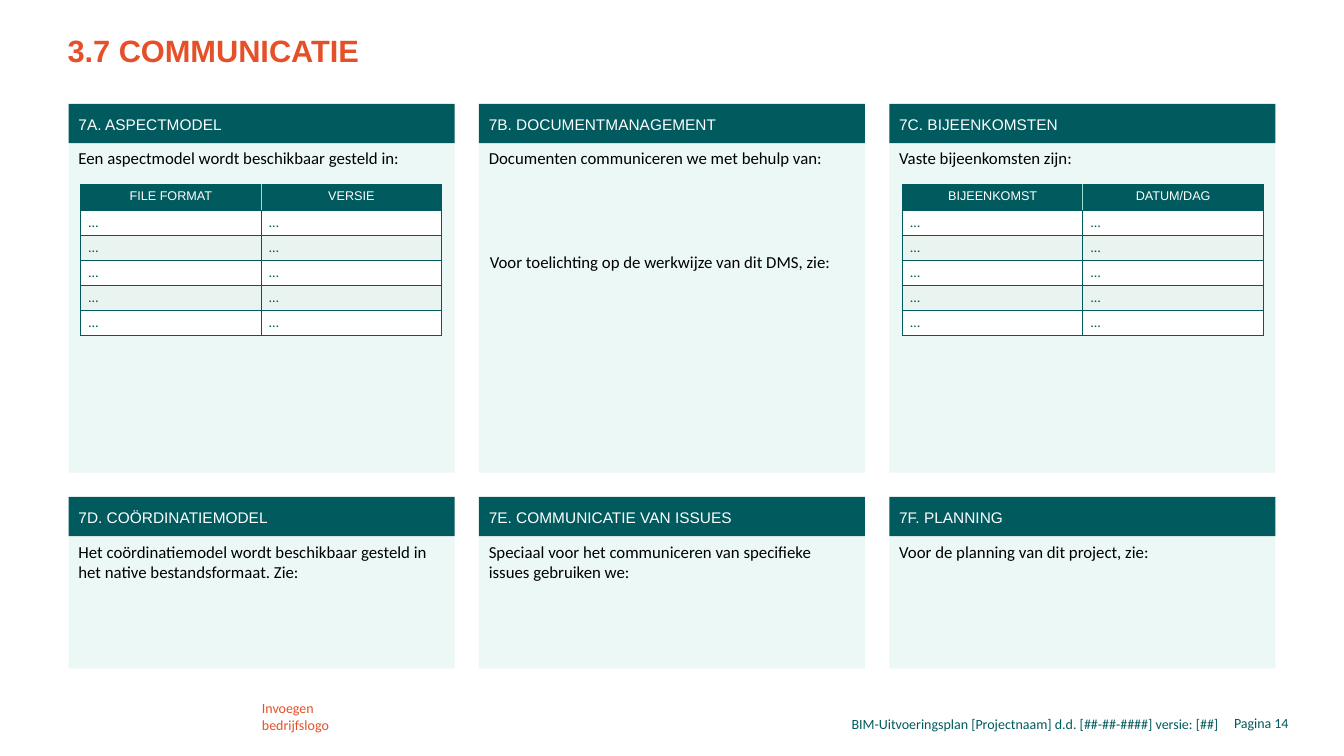
from dataclasses import dataclass

from lxml import etree
from pptx import Presentation
from pptx import util as u
from pptx.dml.color import RGBColor
from pptx.enum import shapes, text
from pptx.oxml import ns

LEFT, CENTER, RIGHT = (text.PP_ALIGN.LEFT, text.PP_ALIGN.CENTER,
                       text.PP_ALIGN.RIGHT)
TOP, MIDDLE = text.MSO_ANCHOR.TOP, text.MSO_ANCHOR.MIDDLE


@dataclass(frozen=True)
class Theme:
    teal: str = "005A5E"
    orange: str = "E55028"
    mint: str = "EBF8F6"
    band: str = "E9F3F0"
    rule: str = "9DDED3"
    white: str = "FFFFFF"
    black: str = "000000"
    head: str = "Arial"
    body: str = "Calibri"
    title: int = 22
    text: int = 12
    bar: int = 11
    small: int = 10
    label: int = 9


class Deck:
    def __init__(self, theme):
        self.theme = theme
        self.prs = Presentation()
        self.prs.slide_width = u.Inches(13.33)
        self.prs.slide_height = u.Inches(7.5)
        self.slide = self.prs.slides.add_slide(self.prs.slide_layouts[5])

    def label(self, frame, words, size, color, font=None, align=LEFT,
              bold=False, space=None):
        """Put formatted words into a text frame."""
        frame.text = words
        for par in frame.paragraphs:
            par.alignment = align
            par.line_spacing = space
            for run in par.runs:
                run.font.size = u.Pt(size)
                run.font.name = font or self.theme.body
                run.font.bold = bold
                run.font.color.rgb = RGBColor.from_string(color)

    def inset(self, item, left=0.1, top=0.05, right=0.1, bottom=0.05):
        """Set the margins of a text frame or a table cell."""
        item.margin_left, item.margin_top = u.Inches(left), u.Inches(top)
        item.margin_right, item.margin_bottom = u.Inches(right), u.Inches(bottom)

    def title(self, words, box):
        shape = self.slide.shapes.title
        shape.left, shape.top, shape.width, shape.height = map(u.Inches, box)
        frame = shape.text_frame
        frame.auto_size = text.MSO_AUTO_SIZE.NONE
        frame.vertical_anchor = TOP
        self.inset(frame, left=0)
        self.label(frame, words, self.theme.title, self.theme.orange,
                   self.theme.head, bold=True)

    def note(self, words, box, size, color, align=LEFT, left=0.1, right=0.1):
        frame = self.slide.shapes.add_textbox(*map(u.Inches, box)).text_frame
        frame.word_wrap = True
        self.inset(frame, left=left, right=right)
        self.label(frame, words, size, color, align=align)

    def block(self, box, fill, anchor):
        """Add a filled rectangle and return its text frame."""
        shape = self.slide.shapes.add_shape(
            shapes.MSO_SHAPE.RECTANGLE, *map(u.Inches, box))
        shape.shadow.inherit = False
        self.paint(shape, fill)
        shape.line.fill.background()
        shape.text_frame.word_wrap = True
        shape.text_frame.vertical_anchor = anchor
        return shape.text_frame

    def panel(self, head, words, x, y, height):
        t, wide, bar = self.theme, 3.83, 0.39
        body = self.block((x, y + bar, wide, height), t.mint, TOP)
        self.label(body, words, t.text, t.black)
        strip = self.block((x, y, wide, bar), t.teal, MIDDLE)
        self.inset(strip, top=0.08)
        self.label(strip, head, t.bar, t.white, t.head, space=0.9)

    def border(self, cell, **sides):
        props = cell._tc.get_or_add_tcPr()
        for at, side in enumerate(("lnL", "lnR", "lnT", "lnB")):
            line = etree.Element(ns.qn("a:" + side), w=str(u.Pt(0.75)))
            fill = etree.SubElement(line, ns.qn("a:solidFill"))
            etree.SubElement(fill, ns.qn("a:srgbClr"),
                             val=sides.get(side, self.theme.teal))
            props.insert(at, line)

    def grid(self, rows, x, y, step):
        """Add a plain two-column table and yield its cells by row and column."""
        wide = 1.79
        table = self.slide.shapes.add_table(
            rows, 2, *map(u.Inches, (x, y, 2 * wide, rows * step))).table
        table.first_row = table.horz_banding = False
        for col in table.columns:
            col.width = u.Inches(wide)
        for r in range(rows):
            for c in range(2):
                yield r, c, table.cell(r, c)

    def paint(self, item, fill):
        item.fill.solid()
        item.fill.fore_color.rgb = RGBColor.from_string(fill)

    def table(self, labels, x):
        t = self.theme
        for _, c, cell in self.grid(1, x, 1.83, 0.25):
            self.label(cell.text_frame, labels[c], t.label, t.white, t.head,
                       CENTER)
            self.paint(cell, t.teal)
            self.border(cell, **{("lnR", "lnL")[c]: t.rule})
        for r, _, cell in self.grid(5, x, 2.09, 0.24):
            self.label(cell.text_frame, "…", t.small, t.teal)
            cell.vertical_anchor = MIDDLE
            self.inset(cell, 0.08, 0.04, 0.04, 0.04)
            self.paint(cell, t.band if r % 2 else t.white)
            self.border(cell)


PANELS = (
    (1.03, 3.27, (
        ("7A. ASPECTMODEL", "Een aspectmodel wordt beschikbaar gesteld in:"),
        ("7B. DOCUMENTMANAGEMENT",
         "Documenten communiceren we met behulp van:"),
        ("7C. BIJEENKOMSTEN", "Vaste bijeenkomsten zijn:"))),
    (4.93, 1.31, (
        ("7D. COÖRDINATIEMODEL", "Het coördinatiemodel wordt beschikbaar "
         "gesteld in het native bestandsformaat. Zie:"),
        ("7E. COMMUNICATIE VAN ISSUES", "Speciaal voor het communiceren van "
         "specifieke issues gebruiken we:"),
        ("7F. PLANNING", "Voor de planning van dit project, zie:"))),
)


def main():
    t = Theme()
    deck = Deck(t)
    deck.title("3.7 COMMUNICATIE", (0.67, 0.26, 5.81, 0.47))
    for y, height, row in PANELS:
        for i, (head, words) in enumerate(row):
            deck.panel(head, words, 0.68 + 4.07 * i, y, height)
    deck.note("Voor toelichting op de werkwijze van dit DMS, zie:",
              (4.76, 2.45, 3.82, 0.3), t.text, t.black)
    deck.table(("FILE FORMAT", "VERSIE"), 0.8)
    deck.table(("BIJEENKOMST", "DATUM/DAG"), 8.95)
    deck.note("Invoegen\nbedrijfslogo", (2.5, 6.89, 1.14, 0.44), t.small,
              t.orange)
    deck.note("BIM-Uitvoeringsplan [Projectnaam] d.d. [##-##-####] versie: [##]",
              (6.77, 7.05, 5.41, 0.27), t.small, t.teal, RIGHT)
    deck.note("Pagina", (12.07, 7.04, 0.54, 0.27), t.small, t.teal, RIGHT, 0, 0)
    deck.note("14", (12.61, 7.04, 0.44, 0.27), t.small, t.teal, LEFT, 0.03, 0)
    deck.prs.save("out.pptx")


if __name__ == "__main__":
    main()
